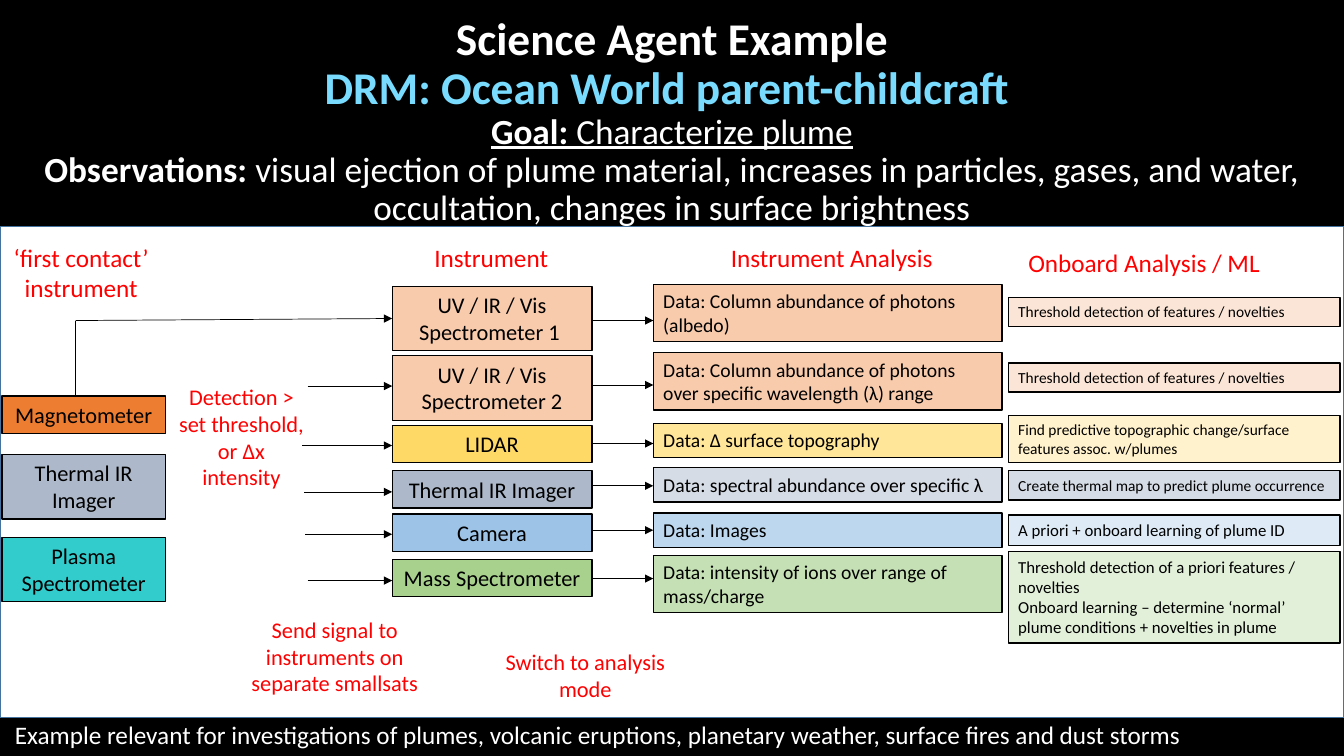
from lxml import etree
from pptx import Presentation
from pptx.dml.color import RGBColor
from pptx.enum.shapes import MSO_CONNECTOR, MSO_SHAPE
from pptx.enum.text import MSO_ANCHOR, MSO_AUTO_SIZE, PP_ALIGN
from pptx.oxml.ns import qn
from pptx.util import Inches, Pt

LEFT, CENTER = PP_ALIGN.LEFT, PP_ALIGN.CENTER
TOP, MIDDLE = MSO_ANCHOR.TOP, MSO_ANCHOR.MIDDLE
GROW, FIXED = MSO_AUTO_SIZE.SHAPE_TO_FIT_TEXT, MSO_AUTO_SIZE.NONE
RECT, STRAIGHT = MSO_SHAPE.RECTANGLE, MSO_CONNECTOR.STRAIGHT
FONT = "Calibri"

BLACK = RGBColor(0, 0, 0)
WHITE = RGBColor(255, 255, 255)
RED = RGBColor(255, 0, 0)
SKY = RGBColor(0x79, 0xDC, 0xFF)
EDGE = RGBColor(0x43, 0x73, 0x9E)
ORANGE = RGBColor(0xED, 0x7D, 0x31)
PEACH = RGBColor(0xF8, 0xCB, 0xAD)
PALE_PEACH = RGBColor(0xFB, 0xE5, 0xD6)
GOLD = RGBColor(0xFF, 0xD9, 0x66)
LIGHT_GOLD = RGBColor(0xFF, 0xE6, 0x99)
PALE_GOLD = RGBColor(0xFF, 0xF2, 0xCC)
SLATE = RGBColor(0xAD, 0xB9, 0xCA)
PALE_SLATE = RGBColor(0xD6, 0xDC, 0xE5)
BLUE = RGBColor(0x9D, 0xC3, 0xE6)
LIGHT_BLUE = RGBColor(0xBD, 0xD7, 0xEE)
PALE_BLUE = RGBColor(0xDE, 0xEB, 0xF7)
GREEN = RGBColor(0xA9, 0xD1, 0x8E)
LIGHT_GREEN = RGBColor(0xC5, 0xE0, 0xB4)
PALE_GREEN = RGBColor(0xE2, 0xF0, 0xD9)
TEAL = RGBColor(0x33, 0xCC, 0xCC)

# Each title line: runs of (text, size, colour, bold, underline)
TITLE = [
    [("Science Agent Example", 32.4, WHITE, True, False)],
    [("DRM: Ocean World parent-childcraft ", 32.4, SKY, True, False)],
    [("Goal:", 25.2, WHITE, True, True),
     (" Characterize plume", 25.2, WHITE, False, True)],
    [("Observations: ", 25.2, WHITE, True, False),
     ("visual ejection of plume material, increases in particles, gases, "
      "and water, occultation, changes in surface brightness",
      25.2, WHITE, False, False)],
]

# Boxes: text, fill, top, height, size
FIRST = [
    ("Magnetometer", ORANGE, 3.93, 0.37, 16),
    ("Thermal IR Imager", SLATE, 4.51, 0.64, 16),
    ("Plasma Spectrometer", TEAL, 5.33, 0.64, 16),
]
TOOLS = [
    ("UV / IR / Vis Spectrometer 1 ", PEACH, 2.84, 0.64, 16),
    ("UV / IR / Vis Spectrometer 2", PEACH, 3.53, 0.64, 16),
    ("LIDAR", GOLD, 4.22, 0.37, 16),
    ("Thermal IR Imager", SLATE, 4.67, 0.37, 16),
    ("Camera", BLUE, 5.1, 0.37, 16),
    ("Mass Spectrometer", GREEN, 5.55, 0.37, 16),
]
DATA = [
    ("Data: Column abundance of photons (albedo)", PEACH, 2.82, 0.57, 14),
    ("Data: Column abundance of photons over specific wavelength (λ) range",
     PEACH, 3.5, 0.57, 14),
    ("Data: Δ surface topography", LIGHT_GOLD, 4.2, 0.34, 14),
    ("Data: spectral abundance over specific λ", PALE_SLATE, 4.64, 0.34, 14),
    ("Data: Images", LIGHT_BLUE, 5.09, 0.34, 14),
    ("Data: intensity of ions over range of mass/charge",
     LIGHT_GREEN, 5.51, 0.57, 14),
]
LEARN = [
    ("Threshold detection of features / novelties", PALE_PEACH, 2.95, 0.29, 11),
    ("Threshold detection of features / novelties", PALE_PEACH, 3.6, 0.29, 11),
    ("Find predictive topographic change/surface features assoc. w/plumes",
     PALE_GOLD, 4.12, 0.47, 11),
    ("Create thermal map to predict plume occurrence",
     PALE_SLATE, 4.67, 0.29, 11),
    ("A priori + onboard learning of plume ID", PALE_BLUE, 5.11, 0.3, 12),
    ("Threshold detection of a priori features / novelties\n"
     "Onboard learning – determine ‘normal’ plume conditions + novelties "
     "in plume", PALE_GREEN, 5.47, 0.91, 12),
]
# Columns: left, width, alignment, boxes
COLUMNS = [(0.02, 1.62, CENTER, FIRST), (3.89, 1.98, CENTER, TOOLS),
           (6.48, 3.46, LEFT, DATA), (10, 3.29, LEFT, LEARN)]

# Labels: text, (left, top, width, height), size, colour, alignment, wrap
LABELS = [
    ("‘first contact’\ninstrument", (0.03, 2.35, 1.55, 0.71),
     18, RED, CENTER, False),
    ("Instrument", (4.21, 2.36, 1.34, 0.4), 18, RED, LEFT, False),
    ("Instrument Analysis", (7.15, 2.36, 2.22, 0.4), 18, RED, LEFT, False),
    ("Onboard Analysis / ML", (10.1, 2.4, 2.52, 0.4), 18, RED, LEFT, False),
    ("Detection > set threshold,\nor Δx intensity", (1.66, 3.75, 1.47, 1.18),
     16, RED, CENTER, True),
    ("Send signal to instruments on separate smallsats",
     (2.34, 6.06, 1.96, 0.91), 16, RED, CENTER, True),
    ("Switch to analysis mode", (4.91, 6.38, 1.79, 0.64),
     16, RED, CENTER, True),
    ("Example relevant for investigations of plumes, volcanic eruptions, "
     "planetary weather, surface fires and dust storms",
     (0.05, 7.09, 11.9, 0.4), 18, WHITE, LEFT, False),
]

BEND = (0.75, 3.18)
SIGNALS = [(3.05, 3.83), (3, 4.42), (3.02, 4.88), (3.03, 5.3), (3.05, 5.76)]
FLOWS = [3.18, 3.82, 4.4, 4.82, 5.26, 5.74]


def style(run, size, color, bold=False, under=False):
    font = run.font
    font.name, font.size = FONT, Pt(size)
    font.bold, font.underline = bold, under
    font.color.rgb = color


def write(shape, text, size, color, align, wrap=True):
    frame = shape.text_frame
    frame.text = text
    frame.word_wrap, frame.auto_size = wrap, GROW
    frame.vertical_anchor = TOP
    for para in frame.paragraphs:
        para.alignment = align
        for run in para.runs:
            style(run, size, color)


def add_rect(slide, area, fill, edge):
    rect = slide.shapes.add_shape(RECT, *map(Inches, area))
    rect.shadow.inherit = False
    rect.fill.solid()
    rect.fill.fore_color.rgb = fill
    rect.line.color.rgb = edge
    rect.line.width = Pt(1)
    return rect


def add_line(slide, start, end, arrow=True):
    line = slide.shapes.add_connector(STRAIGHT, *map(Inches, start + end))
    line.line.color.rgb = BLACK
    line.line.width = Pt(0.5)
    props = line.line._get_or_add_ln()
    if arrow:
        etree.SubElement(props, qn("a:tailEnd"), type="triangle")
    etree.SubElement(props.getparent(), qn("a:effectLst"))


def fill_title(title):
    title.left, title.top = 0, 0
    title.width, title.height = Inches(13.33), Inches(2.42)
    frame = title.text_frame
    frame.word_wrap, frame.auto_size = True, FIXED
    frame.vertical_anchor = MIDDLE
    for i, parts in enumerate(TITLE):
        para = frame.add_paragraph() if i else frame.paragraphs[0]
        para.alignment, para.line_spacing = CENTER, 0.9
        for text, *look in parts:
            run = para.add_run()
            run.text = text
            style(run, *look)


def main():
    deck = Presentation()
    deck.slide_width, deck.slide_height = Inches(13.33), Inches(7.5)
    slide = deck.slides.add_slide(deck.slide_layouts[5])
    back = slide.background.fill
    back.solid()
    back.fore_color.rgb = BLACK

    add_rect(slide, (0, 2.25, 13.33, 4.87), WHITE, EDGE)
    fill_title(slide.shapes.title)
    for left, width, align, boxes in COLUMNS:
        for text, fill, top, height, size in boxes:
            box = add_rect(slide, (left, top, width, height), fill, BLACK)
            write(box, text, size, BLACK, align)
    for text, area, *look in LABELS:
        write(slide.shapes.add_textbox(*map(Inches, area)), text, *look)

    tool_x, tool_w = COLUMNS[1][:2]
    data_x = COLUMNS[2][0]
    add_line(slide, (BEND[0], FIRST[0][2]), BEND, arrow=False)
    add_line(slide, BEND, (tool_x, 3.16))
    for x, y in SIGNALS:
        add_line(slide, (x, y), (tool_x, y))
    for y in FLOWS:
        add_line(slide, (tool_x + tool_w, y), (data_x, y))
    deck.save("out.pptx")


if __name__ == "__main__":
    main()
